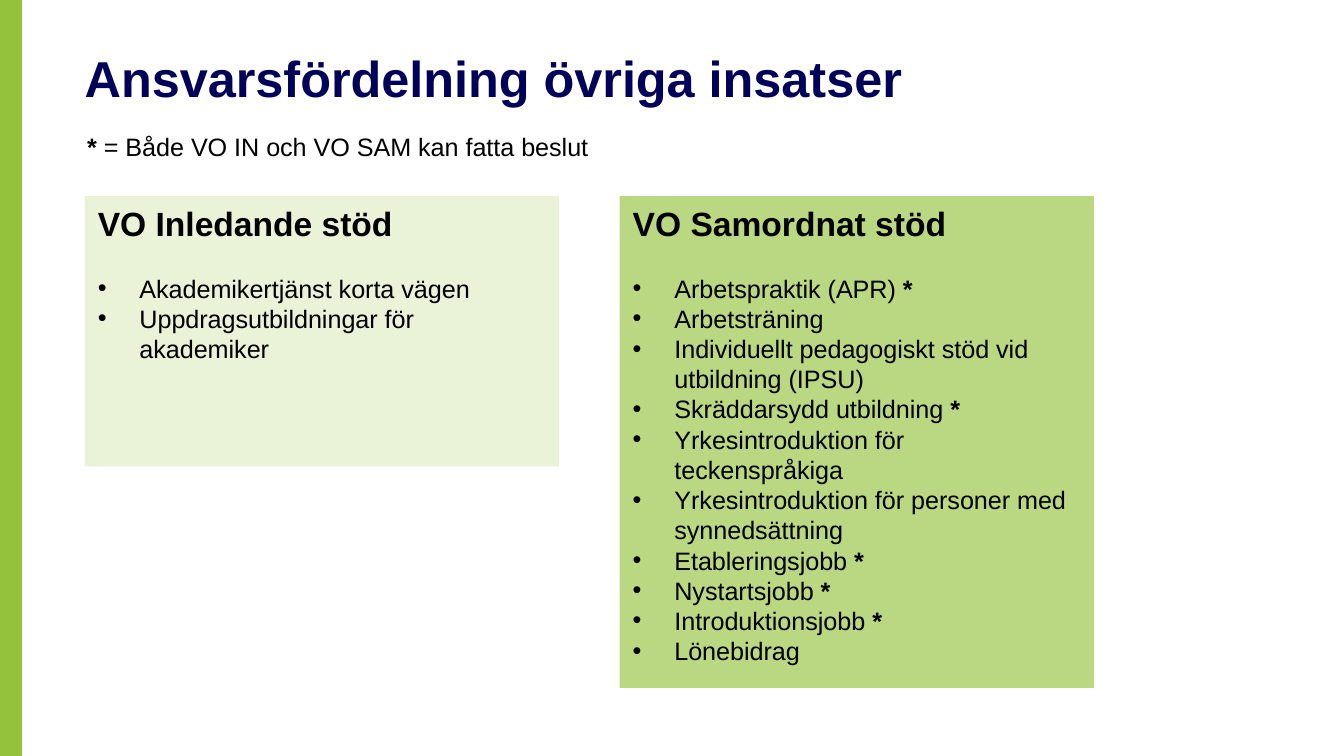
from lxml.etree import SubElement
from pptx import Presentation
from pptx.dml.color import RGBColor
from pptx.enum.shapes import MSO_SHAPE as Shape
from pptx.enum.text import MSO_ANCHOR as Anchor, MSO_AUTO_SIZE as AutoSize, PP_ALIGN as Align
from pptx.oxml.ns import qn
from pptx.util import Inches, Pt

GREEN = RGBColor(0x95, 0xC2, 0x3D)
PALE_GREEN = RGBColor(0xEA, 0xF2, 0xD8)
MID_GREEN = RGBColor(0xBA, 0xD7, 0x81)
NAVY = RGBColor(0x00, 0x00, 0x5A)
BLACK = RGBColor(0x00, 0x00, 0x00)

FONT = "Arial"
BODY_SIZE = 13.5
MARK = "*"
SLIDE_WIDTH = 10
SLIDE_HEIGHT = SLIDE_WIDTH * 9 / 16
MARGIN, PANEL_TOP = 0.63, 1.46
PANEL_WIDTH, GUTTER = 3.53, 0.45
INDENT = Inches(0.31)

INITIAL_SUPPORT = [
    "Akademikertjänst korta vägen",
    "Uppdragsutbildningar för akademiker",
]
COORDINATED_SUPPORT = [
    "Arbetspraktik (APR) *",
    "Arbetsträning",
    "Individuellt pedagogiskt stöd vid utbildning (IPSU)",
    "Skräddarsydd utbildning *",
    "Yrkesintroduktion för teckenspråkiga",
    "Yrkesintroduktion för personer med synnedsättning",
    "Etableringsjobb *",
    "Nystartsjobb *",
    "Introduktionsjobb *",
    "Lönebidrag",
]
PANELS = [
    ("VO Inledande stöd", INITIAL_SUPPORT, PALE_GREEN, 2.01),
    ("VO Samordnat stöd", COORDINATED_SUPPORT, MID_GREEN, 3.66),
]


def style(paragraph, size, color=BLACK, bold=False):
    paragraph.alignment = Align.LEFT
    font = paragraph.font
    font.name, font.size, font.bold = FONT, Pt(size), bold
    font.color.rgb = color


def add_marked_text(paragraph, text):
    before, mark, after = text.partition(MARK)
    lead = " " if before.endswith(" ") else ""
    for part, bold in ((before.rstrip(), False), (lead + mark, True), (after, False)):
        if part:
            run = paragraph.add_run()
            run.text = part
            run.font.bold = bold


def add_bullet(paragraph):
    properties = paragraph._p.get_or_add_pPr()
    properties.set("marL", str(INDENT))
    properties.set("indent", str(-INDENT))
    SubElement(properties, qn("a:buFont"), typeface=FONT)
    SubElement(properties, qn("a:buChar"), char="•")


def add_block(slide, left, top, width, height, fill):
    block = slide.shapes.add_shape(
        Shape.RECTANGLE, Inches(left), Inches(top), Inches(width), Inches(height))
    block.shadow.inherit = False
    block.fill.solid()
    block.fill.fore_color.rgb = fill
    block.line.fill.background()
    return block


def add_side_bar(slide):
    bar = add_block(slide, 0, 0, 0.16, SLIDE_HEIGHT, GREEN)
    bar.line.color.rgb = GREEN
    bar.line.width = Pt(1)


def add_title(slide, text):
    title = slide.shapes.add_textbox(
        Inches(MARGIN), Inches(0.35), Inches(8.12), Inches(0.74))
    frame = title.text_frame
    frame.word_wrap = True
    frame.margin_left = frame.margin_right = frame.margin_top = frame.margin_bottom = 0
    frame.text = text
    style(frame.paragraphs[0], 27, NAVY, True)


def add_legend(slide, text):
    legend = slide.shapes.add_textbox(
        Inches(0.55), Inches(0.93), Inches(3.98), Inches(0.33))
    frame = legend.text_frame
    frame.word_wrap = False
    frame.auto_size = AutoSize.SHAPE_TO_FIT_TEXT
    add_marked_text(frame.paragraphs[0], text)
    style(frame.paragraphs[0], BODY_SIZE)


def add_panel(slide, column, heading, items, fill, height):
    left = MARGIN + column * (PANEL_WIDTH + GUTTER)
    frame = add_block(slide, left, PANEL_TOP, PANEL_WIDTH, height, fill).text_frame
    frame.word_wrap = True
    frame.margin_right = Inches(0.12)
    frame.vertical_anchor = Anchor.TOP
    frame.text = heading
    frame.paragraphs[0].space_after = Pt(16)
    style(frame.paragraphs[0], 18, bold=True)
    for item in items:
        paragraph = frame.add_paragraph()
        add_bullet(paragraph)
        add_marked_text(paragraph, item)
        style(paragraph, BODY_SIZE)


def main():
    deck = Presentation()
    deck.slide_width, deck.slide_height = Inches(SLIDE_WIDTH), Inches(SLIDE_HEIGHT)
    slide = deck.slides.add_slide(deck.slide_layouts[6])
    add_side_bar(slide)
    add_title(slide, "Ansvarsfördelning övriga insatser")
    add_legend(slide, "* = Både VO IN och VO SAM kan fatta beslut")
    for column, panel in enumerate(PANELS):
        add_panel(slide, column, *panel)
    deck.save("out.pptx")


if __name__ == "__main__":
    main()
